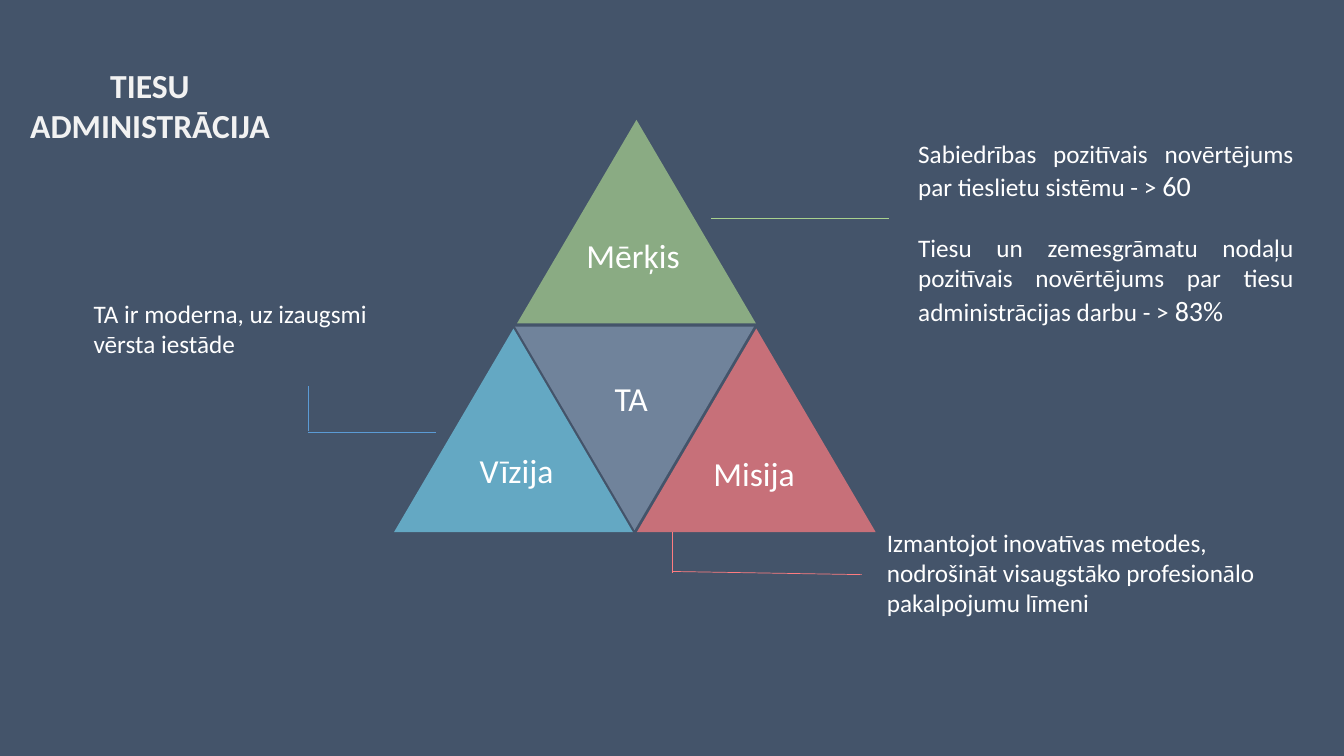
import pptx
import pptx.dml.color
import pptx.enum.shapes
import pptx.enum.text
import pptx.oxml.ns
import pptx.util
from lxml import etree
from pptx.util import Cm

COLORS = {
    "background": "44546A",
    "vision": "73CDE9",
    "mission": "FF7C80",
    "goal": "A9D18E",
    "center": "8497B0",
    "vision_line": "5B9BD5",
    "title": "F2F2F2",
    "text": "FFFFFF",
}
ALIGN = pptx.enum.text.PP_ALIGN
TRIANGLE_W, TRIANGLE_H = 6.02, 5.13


def rgb(name):
    return pptx.dml.color.RGBColor.from_string(COLORS[name])


def add_text(paragraphs, left, top, width, height, size=18, color="text",
             bold=False, align=ALIGN.LEFT, gap=0):
    """Each paragraph is a list of (text, size) runs or a plain string; gap is in points."""
    tf = s.shapes.add_textbox(Cm(left), Cm(top), Cm(width), Cm(height)).text_frame
    tf.word_wrap = True
    for i, runs in enumerate(paragraphs):
        p = tf.add_paragraph() if i else tf.paragraphs[0]
        p.alignment = align
        if i:
            p.space_before = pptx.util.Pt(gap)
        for text, run_size in [(runs, size)] if isinstance(runs, str) else runs:
            r = p.add_run()
            r.text = text
            r.font.name = "Calibri"
            r.font.size = pptx.util.Pt(run_size)
            r.font.bold = bold
            r.font.color.rgb = rgb(color)


prs = pptx.Presentation()
prs.slide_width, prs.slide_height = Cm(33.87), Cm(19.05)
s = prs.slides.add_slide(prs.slide_layouts[6])
s.background.fill.solid()
s.background.fill.fore_color.rgb = rgb("background")

# Triangles: label, color, left, top, rotation, label box (left, top, width)
triangles = [
    ("Vīzija", "vision", 9.93, 8.28, 0, (11.84, 11.2, 2.62)),
    ("Misija", "mission", 16.05, 8.28, 0, (17.73, 11.3, 3.02)),
    ("Mērķis", "goal", 13.03, 3.02, 0, (14.53, 5.79, 3.18)),
    ("TA", "center", 12.98, 8.23, 180, (15.24, 9.4, 1.42)),
]
for label, color, left, top, rotation, (label_left, label_top, label_w) in triangles:
    sp = s.shapes.add_shape(pptx.enum.shapes.MSO_SHAPE.ISOSCELES_TRIANGLE,
                            Cm(left), Cm(top), Cm(TRIANGLE_W), Cm(TRIANGLE_H))
    sp.rotation = rotation
    sp.shadow.inherit = False
    sp.line.fill.background()
    sp.fill.solid()
    sp.fill.fore_color.rgb = rgb(color)
    srgb = sp.fill._xPr.find(".//" + pptx.oxml.ns.qn("a:srgbClr"))
    etree.SubElement(srgb, pptx.oxml.ns.qn("a:alpha"), val="70000")
    add_text([label], label_left, label_top, label_w, 1.27, size=24)

# Callout lines: color, start x, start y, end x, end y
callout_lines = [
    ("goal", 17.93, 5.49, 22.4, 5.49),
    ("vision_line", 7.77, 10.9, 11, 10.9),
    ("vision_line", 7.77, 9.73, 7.77, 10.87),
    ("mission", 16.94, 13.41, 16.94, 14.43),
    ("mission", 21.72, 14.48, 16.94, 14.4),
]
for color, *ends in callout_lines:
    line = s.shapes.add_connector(pptx.enum.shapes.MSO_CONNECTOR.STRAIGHT,
                                  *[Cm(v) for v in ends])
    line.line.color.rgb = rgb(color)
    line.line.width = pptx.util.Pt(0.5)
    etree.SubElement(line._element.spPr, pptx.oxml.ns.qn("a:effectLst"))

# Title and descriptions
add_text(["TIESU ADMINISTRĀCIJA"], -0.18, 1.5, 7.92, 2.31,
         size=24, color="title", bold=True, align=ALIGN.CENTER)
add_text([
    [("Sabiedrības pozitīvais novērtējums par tieslietu sistēmu - > ", 18), ("60", 20)],
    [("Tiesu un zemesgrāmatu nodaļu pozitīvais novērtējums par tiesu "
      "administrācijas darbu - > ", 18), ("83%", 20)],
], 22.89, 3.35, 9.96, 5.05, align=ALIGN.JUSTIFY, gap=22)
add_text(["TA ir moderna, uz izaugsmi vērsta iestāde"], 2.11, 7.39, 8.89, 1.8)
add_text(["Izmantojot inovatīvas metodes, nodrošināt visaugstāko profesionālo "
          "pakalpojumu līmeni"], 22.1, 13.16, 10.29, 3.33)

prs.save("out.pptx")
